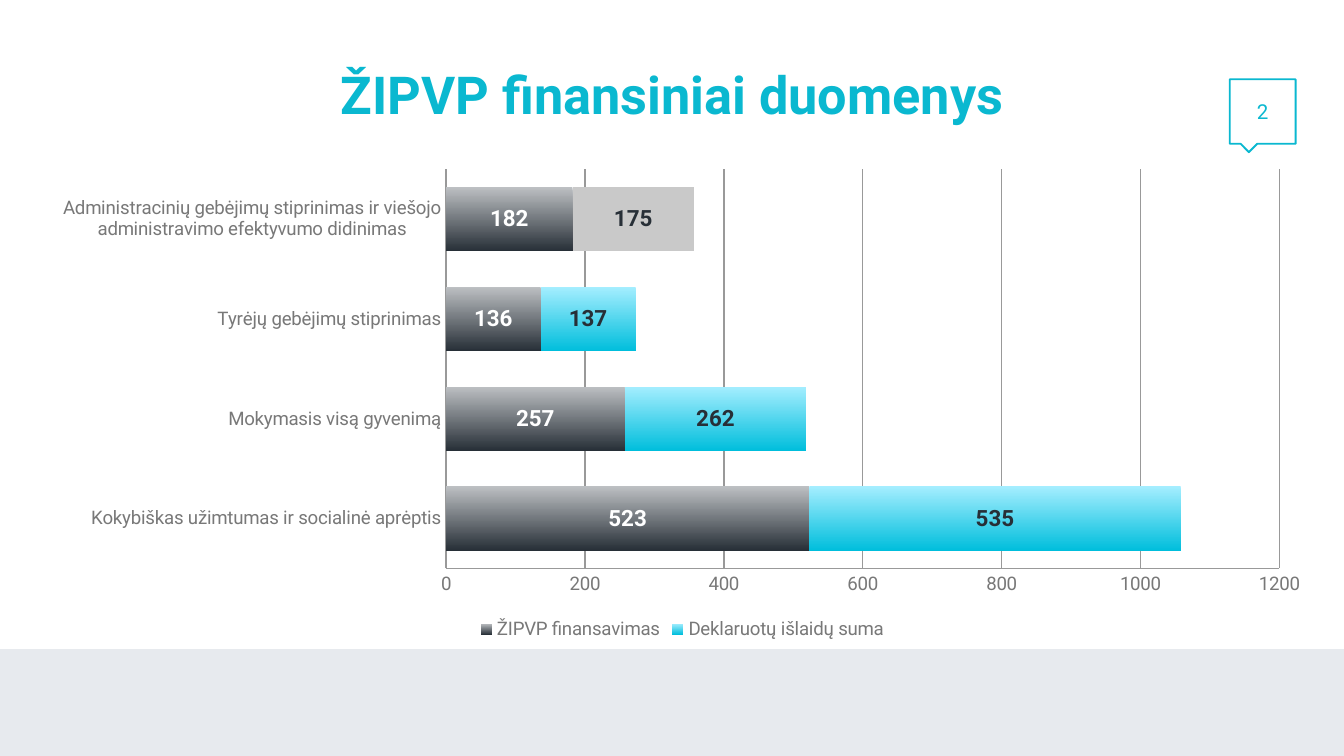
from dataclasses import dataclass

from lxml import etree
from pptx import Presentation
from pptx import util as u
from pptx.chart import data as cd
from pptx.dml import color as col
from pptx.enum import chart as ch, shapes, text


@dataclass(frozen=True)
class Theme:
    """Colours, font and type sizes of the slide."""
    font: str = "Roboto"
    cyan: str = "0AB8D0"
    dark: str = "272F37"
    white: str = "FFFFFF"
    band: str = "E7EAEE"
    gray: str = "787878"
    grid: str = "999999"
    pale: str = "C9C9C9"
    steel: tuple = ("BDC0C3", "272F37")
    aqua: tuple = ("A5EEFF", "00BEDC")
    head: int = 28
    label: int = 12
    page: int = 11
    axis: int = 10


T = Theme()
CATS = (
    "Kokybiškas užimtumas ir socialinė aprėptis",
    "Mokymasis visą gyvenimą",
    "Tyrėjų gebėjimų stiprinimas",
    "Administracinių gebėjimų stiprinimas ir viešojo "
    "administravimo efektyvumo didinimas",
)
SERIES = (
    ("ŽIPVP finansavimas", (523, 257, 136, 182), T.steel, T.white),
    ("Deklaruotų išlaidų suma", (535, 262, 137, 175), T.aqua, T.dark),
)


def rgb(code):
    """Turn a hex code into a colour."""
    return col.RGBColor.from_string(code)


def style(font, size, color, bold=False):
    """Format a font."""
    font.name, font.size, font.bold = T.font, u.Pt(size), bold
    font.color.rgb = rgb(color)


def write(frame, words, size, color, bold=False, inset=(0.07, 0.04)):
    """Put one centred line of formatted text in a frame."""
    frame.margin_left = frame.margin_right = u.Inches(inset[0])
    frame.margin_top = frame.margin_bottom = u.Inches(inset[1])
    frame.vertical_anchor = text.MSO_ANCHOR.MIDDLE
    para = frame.paragraphs[0]
    para.alignment = text.PP_ALIGN.CENTER
    run = para.add_run()
    run.text = words
    style(run.font, size, color, bold)


def place(shape, box):
    """Move a shape to a box given in inches."""
    shape.left, shape.top, shape.width, shape.height = map(u.Inches, box)


def add_band(slide, box):
    """Draw the footer band."""
    band = slide.shapes.add_shape(shapes.MSO_SHAPE.RECTANGLE, *map(u.Inches, box))
    band.shadow.inherit = False
    band.fill.solid()
    band.fill.fore_color.rgb = rgb(T.band)
    band.line.fill.background()


def add_title(slide, box):
    """Fill the title placeholder."""
    title = slide.shapes.title
    place(title, box)
    write(title.text_frame, "ŽIPVP finansiniai duomenys", T.head, T.cyan, bold=True)


def add_page(slide, box):
    """Draw the page number callout."""
    page = slide.shapes.add_shape(
        shapes.MSO_SHAPE.RECTANGULAR_CALLOUT, *map(u.Inches, box))
    page.shadow.inherit = False
    page.adjustments[0], page.adjustments[1] = -0.21, 0.63
    page.fill.background()
    page.line.color.rgb = rgb(T.cyan)
    page.line.width = u.Pt(1)
    page.text_frame.word_wrap = False
    write(page.text_frame, "2", T.page, T.cyan, inset=(0.16, 0.15))


def set_plot(chart, box, area):
    """Fix the inner plot area, given in inches, within the chart box."""
    plot = chart.element.chart.plotArea
    ns = plot.nsmap["c"]
    for old in plot.findall(f"{{{ns}}}layout"):
        plot.remove(old)
    layout = etree.Element(f"{{{ns}}}layout")
    inner = etree.SubElement(layout, f"{{{ns}}}manualLayout")
    left, top, wide, high = area
    items = (
        ("layoutTarget", "inner"), ("xMode", "edge"), ("yMode", "edge"),
        ("x", (left - box[0]) / box[2]), ("y", (top - box[1]) / box[3]),
        ("w", wide / box[2]), ("h", high / box[3]),
    )
    for name, val in items:
        val = val if isinstance(val, str) else f"{val:.4f}"
        etree.SubElement(inner, f"{{{ns}}}{name}", val=val)
    plot.insert(0, layout)


def set_axes(chart):
    """Format both axes and the grid."""
    for axis in (chart.category_axis, chart.value_axis):
        axis.major_tick_mark = axis.minor_tick_mark = ch.XL_TICK_MARK.NONE
        axis.format.line.color.rgb = rgb(T.grid)
        style(axis.tick_labels.font, T.axis, T.gray)
    axis = chart.value_axis
    axis.minimum_scale, axis.maximum_scale, axis.major_unit = 0, 1200, 200
    axis.has_major_gridlines = True
    line = axis.major_gridlines.format.line
    line.color.rgb, line.width = rgb(T.grid), u.Pt(0.75)
    axis.tick_labels.number_format = "0"
    axis.tick_labels.number_format_is_linked = False


def set_bars(plot):
    """Format the bars and their labels."""
    plot.gap_width, plot.overlap, plot.vary_by_categories = 55, 100, False
    for bars, (_, _, tones, ink) in zip(plot.series, SERIES):
        fill = bars.format.fill
        fill.gradient()
        fill.gradient_angle = 270
        for stop, tone in zip(fill.gradient_stops, tones):
            stop.color.rgb = rgb(tone)
        labels = bars.data_labels
        labels.show_value = True
        labels.number_format, labels.number_format_is_linked = "0", False
        labels.position = ch.XL_LABEL_POSITION.CENTER
        style(labels.font, T.label, ink, bold=True)
    fill = plot.series[1].points[3].format.fill
    fill.solid()
    fill.fore_color.rgb = rgb(T.pale)


def add_bars(slide, box):
    """Add the stacked bar chart."""
    data = cd.CategoryChartData(number_format="0")
    data.categories = CATS
    for name, vals, *_ in SERIES:
        data.add_series(name, vals)
    chart = slide.shapes.add_chart(
        ch.XL_CHART_TYPE.BAR_STACKED, *map(u.Inches, box), data).chart
    style(chart.font, T.axis, T.gray)
    chart.has_title = False
    chart.has_legend = True
    chart.legend.position = ch.XL_LEGEND_POSITION.BOTTOM
    chart.legend.include_in_layout = False
    style(chart.legend.font, T.axis, T.gray)
    set_axes(chart)
    set_bars(chart.plots[0])
    left, top, wide, high = box
    set_plot(chart, box, (left + 3.04, top + 0.07, wide - 3.39, high - 0.64))


def main():
    """Build and save the slide."""
    prs = Presentation()
    prs.slide_width = u.Inches(10)
    prs.slide_height = prs.slide_width * 9 // 16
    slide = prs.slides.add_slide(prs.slide_layouts[5])
    add_band(slide, (0, 4.83, 10, 0.81))
    add_bars(slide, (0.28, 1.19, 9.59, 3.61))
    add_title(slide, (0.5, 0.23, 9, 0.94))
    add_page(slide, (9.15, 0.59, 0.49, 0.48))
    prs.save("out.pptx")


if __name__ == "__main__":
    main()
